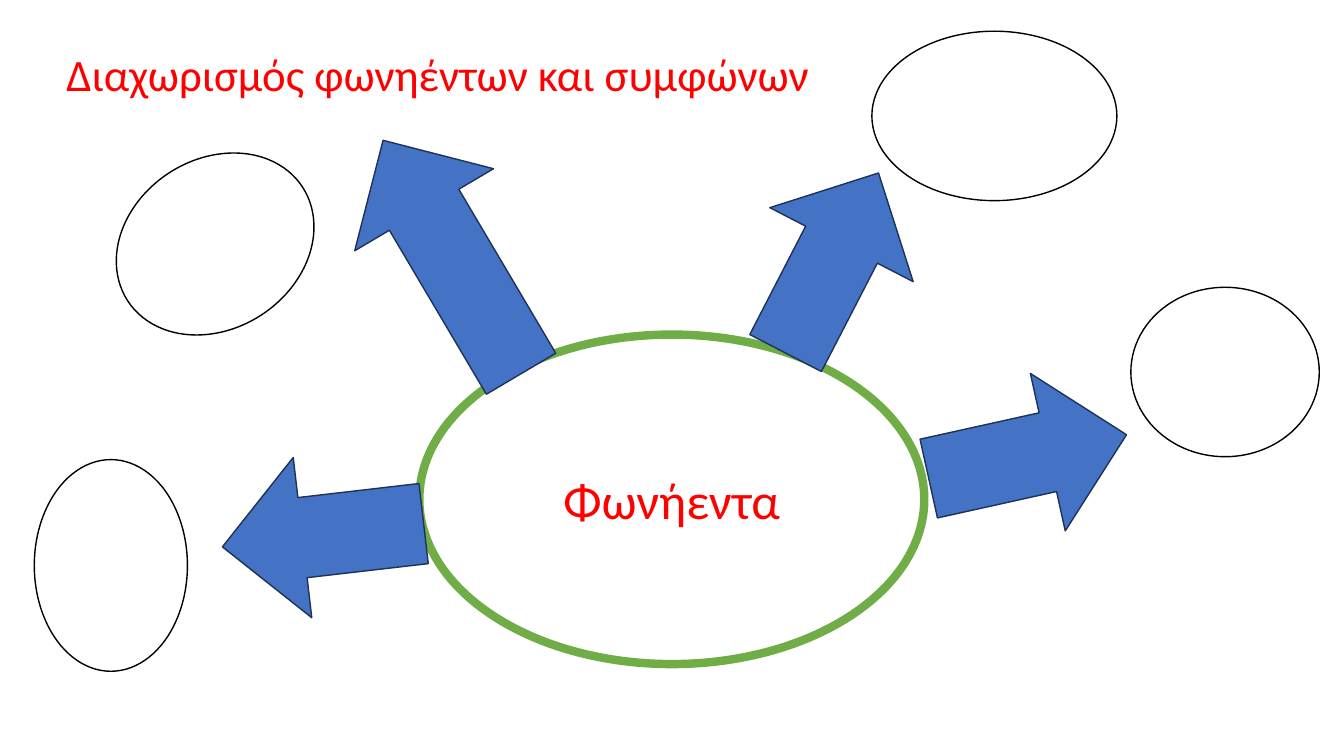
from pptx import Presentation
from pptx.dml.color import RGBColor
from pptx.enum.shapes import MSO_SHAPE as Preset
from pptx.enum.text import MSO_ANCHOR as Anchor, PP_ALIGN as Align
from pptx.util import Pt

SLIDE_SIZE = (960, 540)
FONT = "Calibri"
RED, WHITE, BLACK = "FF0000", "FFFFFF", "000000"
GREEN, BLUE, NAVY = "70AD47", "4472C4", "1E3256"

TITLE = ("Διαχωρισμός φωνηέντων και συμφώνων", (40.3, 29.5, 557.3, 85), 32)
HUB = ("Φωνήεντα", (299.5, 239, 360.7, 235.4), 36)

STYLES = {
    "arrow": (Preset.RIGHT_ARROW, BLUE, NAVY),
    "bubble": (Preset.OVAL, WHITE, BLACK),
}
BRANCHES = [
    ("arrow", (522, 130.3, 144.7, 115.2), 297.3),
    ("arrow", (661.7, 268.6, 144.7, 115.2), 347.5),
    ("arrow", (158.4, 324.7, 144.7, 115.2), 173.4),
    ("bubble", (622.8, 22.3, 175, 121), 0),
    ("bubble", (24.5, 328.3, 109.4, 151.2), 0),
    ("bubble", (807.8, 205.2, 134.6, 121), 0),
    ("arrow", (226.1, 126, 193.7, 115.2), 239.4),
    ("bubble", (79.2, 113.8, 149, 121), 326.9),
]


def color(hex_text):
    return RGBColor.from_string(hex_text)


def write(shape, text, size, align, anchor):
    frame = shape.text_frame
    frame.word_wrap = True
    frame.vertical_anchor = anchor
    paragraph = frame.paragraphs[0]
    paragraph.text = text
    paragraph.alignment = align
    paragraph.font.name = FONT
    paragraph.font.size = Pt(size)
    paragraph.font.color.rgb = color(RED)


def draw(slide, preset, box, fill, line, width=1, rotation=0):
    shape = slide.shapes.add_shape(preset, *map(Pt, box))
    shape.shadow.inherit = False
    shape.rotation = rotation
    shape.fill.solid()
    shape.fill.fore_color.rgb = color(fill)
    shape.line.color.rgb = color(line)
    shape.line.width = Pt(width)
    return shape


def main():
    presentation = Presentation()
    presentation.slide_width, presentation.slide_height = map(Pt, SLIDE_SIZE)
    slide = presentation.slides.add_slide(presentation.slide_layouts[6])

    text, box, size = TITLE
    title = slide.shapes.add_textbox(*map(Pt, box))
    write(title, text, size, Align.LEFT, Anchor.TOP)

    text, box, size = HUB
    hub = draw(slide, Preset.OVAL, box, WHITE, GREEN, width=6)
    write(hub, text, size, Align.CENTER, Anchor.MIDDLE)

    for kind, box, rotation in BRANCHES:
        preset, fill, line = STYLES[kind]
        draw(slide, preset, box, fill, line, rotation=rotation)

    presentation.save("out.pptx")


if __name__ == "__main__":
    main()
